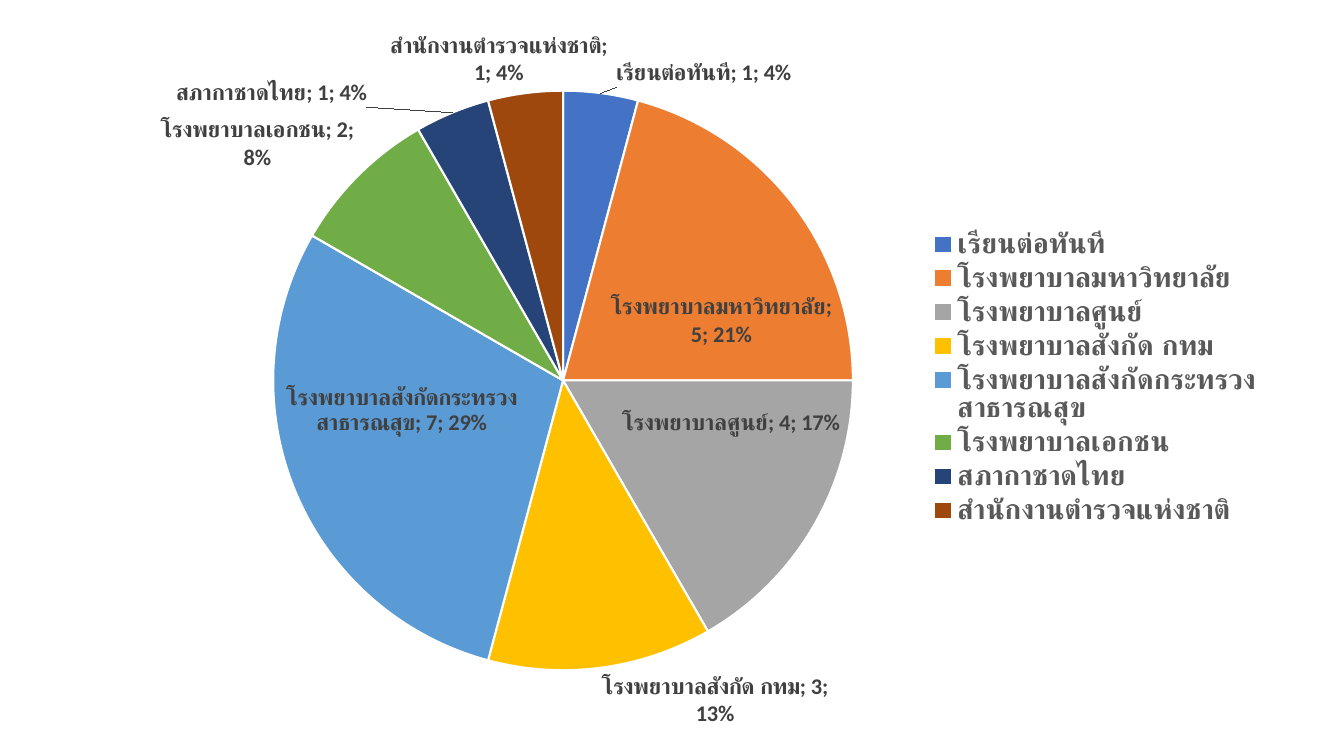
from lxml import etree
from pptx import Presentation
from pptx import util as u
from pptx.chart import data
from pptx.dml import color
from pptx.enum import chart as ch
from pptx.oxml import ns

HUES = {"ink": "000000", "label": "404040", "key": "595959", "edge": "FFFFFF"}

# Workplace, count, slice colour
JOBS = [
    ("เรียนต่อทันที", 1, "4472C4"),
    ("โรงพยาบาลมหาวิทยาลัย", 5, "ED7D31"),
    ("โรงพยาบาลศูนย์", 4, "A5A5A5"),
    ("โรงพยาบาลสังกัด กทม", 3, "FFC000"),
    ("โรงพยาบาลสังกัดกระทรวงสาธารณสุข", 7, "5B9BD5"),
    ("โรงพยาบาลเอกชน", 2, "70AD47"),
    ("สภากาชาดไทย", 1, "264478"),
    ("สำนักงานตำรวจแห่งชาติ", 1, "9E480E"),
]


def rgb(hue):
    return color.RGBColor.from_string(hue)


def style(text, size=16, hue=HUES["ink"], bold=True, face="Calibri"):
    font = text.font
    font.size, font.bold, font.name = u.Pt(size), bold, face
    font.color.rgb = rgb(hue)


def add(parent, tag, **attrs):
    return etree.SubElement(parent, ns.qn(tag), **attrs)


def place(chart, x, y, w, h):
    """Fix the inner plot area, in fractions of the chart."""
    area = chart.plots[0]._element.getparent()
    for old in area.findall(ns.qn("c:layout")):
        area.remove(old)
    frame = etree.Element(ns.qn("c:layout"))
    area.insert(0, frame)
    spot = add(frame, "c:manualLayout")
    rules = [("layoutTarget", "inner"), ("xMode", "edge"), ("yMode", "edge"),
             ("x", x), ("y", y), ("w", w), ("h", h)]
    for tag, val in rules:
        add(spot, "c:" + tag, val=str(val))


def label(plot):
    plot.has_data_labels = True
    tags = plot.data_labels
    style(tags, hue=HUES["label"])
    tags.show_category_name = tags.show_value = tags.show_percentage = True
    tags.position = ch.XL_LABEL_POSITION.BEST_FIT
    gap = etree.Element(ns.qn("c:separator"))
    gap.text = "; "
    tags._element.find(ns.qn("c:showBubbleSize")).addnext(gap)


def draw_pie(slide, left, top, wide, high):
    # Counts per workplace
    source = data.CategoryChartData()
    source.categories = [name for name, _, _ in JOBS]
    source.add_series("Series 1", [count for _, count, _ in JOBS])
    box = [u.Inches(n) for n in (left, top, wide, high)]
    chart = slide.shapes.add_chart(ch.XL_CHART_TYPE.PIE, *box, source).chart
    chart.has_title = False
    style(chart)

    # Slices
    plot = chart.plots[0]
    plot.vary_by_categories = True
    for i, (_, _, hue) in enumerate(JOBS):
        form = plot.series[0].points[i].format
        form.fill.solid()
        form.fill.fore_color.rgb = rgb(hue)
        form.line.color.rgb = rgb(HUES["edge"])
        form.line.width = u.Pt(1.5)
    label(plot)
    size = 5.75
    place(chart, 1.58 / wide, 0.81 / high, size / wide, size / high)

    # Legend
    chart.has_legend = True
    key = chart.legend
    key.position = ch.XL_LEGEND_POSITION.RIGHT
    key.include_in_layout = False
    style(key, size=20, hue=HUES["key"])


def main():
    deck = Presentation()
    deck.slide_width, deck.slide_height = u.Inches(13.33), u.Inches(7.5)
    slide = deck.slides.add_slide(deck.slide_layouts[6])
    draw_pie(slide, 1.13, 0.09, 11.5, 7.31)
    deck.save("out.pptx")


if __name__ == "__main__":
    main()
